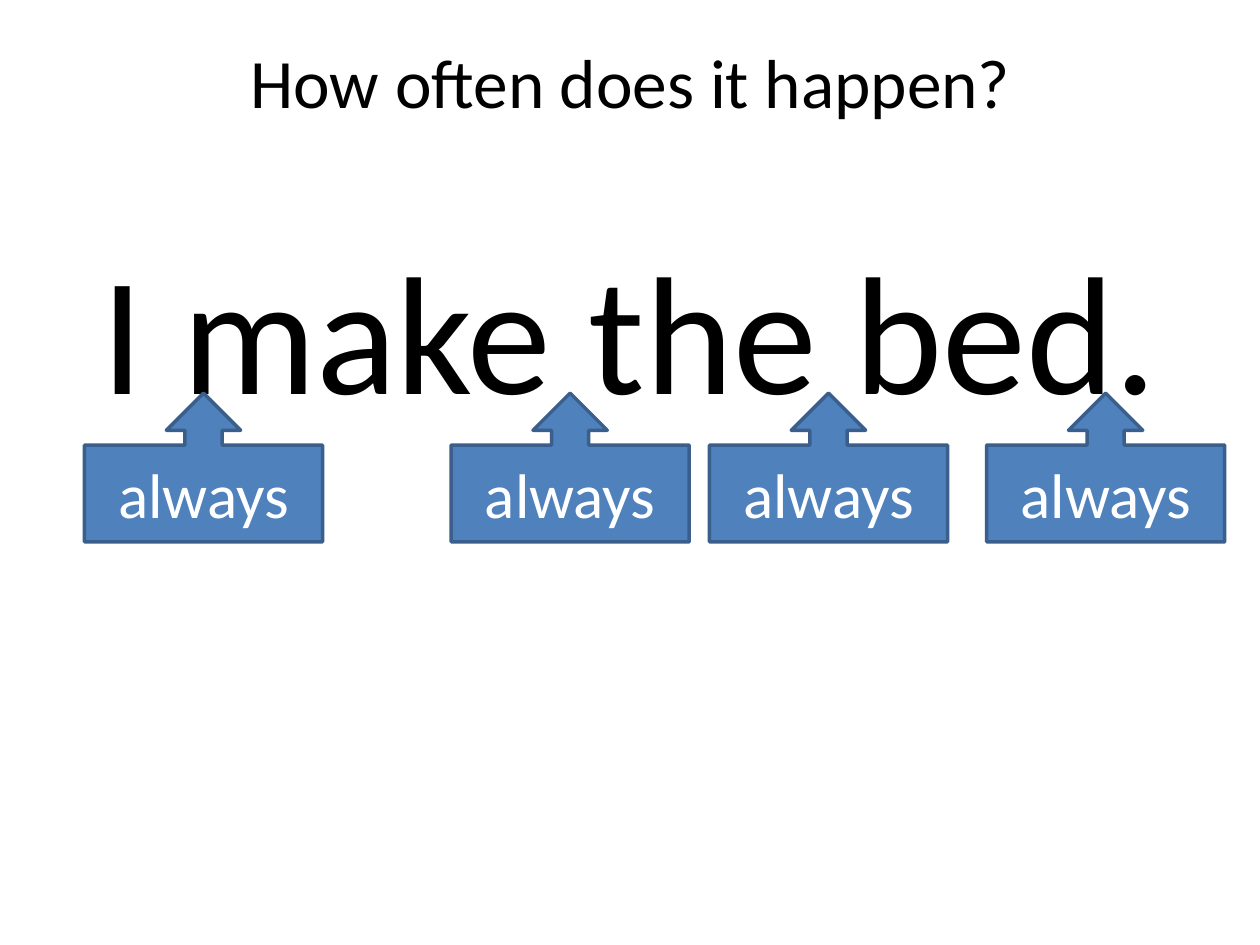
from dataclasses import dataclass

from pptx import Presentation
from pptx.dml.color import RGBColor
from pptx.enum.shapes import MSO_SHAPE
from pptx.enum.text import MSO_ANCHOR, PP_ALIGN
from pptx.shapes.autoshape import Shape
from pptx.slide import Slide
from pptx.text.text import TextFrame
from pptx.util import Inches, Pt

BLACK = RGBColor(0x00, 0x00, 0x00)
WHITE = RGBColor(0xFF, 0xFF, 0xFF)
BLUE = RGBColor(0x4F, 0x81, 0xBD)
DARK_BLUE = RGBColor(0x3A, 0x5F, 0x8C)
FONT = "Calibri"
CALLOUT_TOP, CALLOUT_WIDTH, CALLOUT_HEIGHT = 3.12, 1.89, 1.18


@dataclass(frozen=True)
class AdverbCallout:
    left: float
    word: str = "always"


CALLOUTS = [AdverbCallout(left) for left in (0.67, 3.58, 5.63, 7.83)]


def place(box: Shape, left: float, top: float, width: float, height: float) -> None:
    box.left, box.top = Inches(left), Inches(top)
    box.width, box.height = Inches(width), Inches(height)


def write(frame: TextFrame, text: str, size: float, color: RGBColor, anchor: MSO_ANCHOR) -> None:
    frame.text = text
    frame.word_wrap = True
    frame.vertical_anchor = anchor
    para = frame.paragraphs[0]
    para.alignment = PP_ALIGN.CENTER
    font = para.runs[0].font
    font.name, font.size = FONT, Pt(size)
    font.color.rgb = color


def add_callout(page: Slide, callout: AdverbCallout) -> None:
    box = page.shapes.add_shape(
        MSO_SHAPE.UP_ARROW_CALLOUT,
        Inches(callout.left),
        Inches(CALLOUT_TOP),
        Inches(CALLOUT_WIDTH),
        Inches(CALLOUT_HEIGHT),
    )
    box.shadow.inherit = False
    box.fill.solid()
    box.fill.fore_color.rgb = BLUE
    box.line.color.rgb = DARK_BLUE
    box.line.width = Pt(2)
    write(box.text_frame, callout.word, 36, WHITE, MSO_ANCHOR.MIDDLE)


def main() -> None:
    deck = Presentation()
    deck.slide_width, deck.slide_height = Inches(10), Inches(7.5)
    page = deck.slides.add_slide(deck.slide_layouts[5])

    title = page.shapes.title
    place(title, 0.51, 0.3, 8.99, 0.69)
    write(title.text_frame, "How often does it happen?", 39.6, BLACK, MSO_ANCHOR.MIDDLE)

    sentence = page.shapes.add_textbox(Inches(0.5), Inches(1.75), Inches(9), Inches(4.95))
    write(sentence.text_frame, "I make the bed.", 96, BLACK, MSO_ANCHOR.TOP)

    for callout in CALLOUTS:
        add_callout(page, callout)

    deck.save("out.pptx")


if __name__ == "__main__":
    main()
